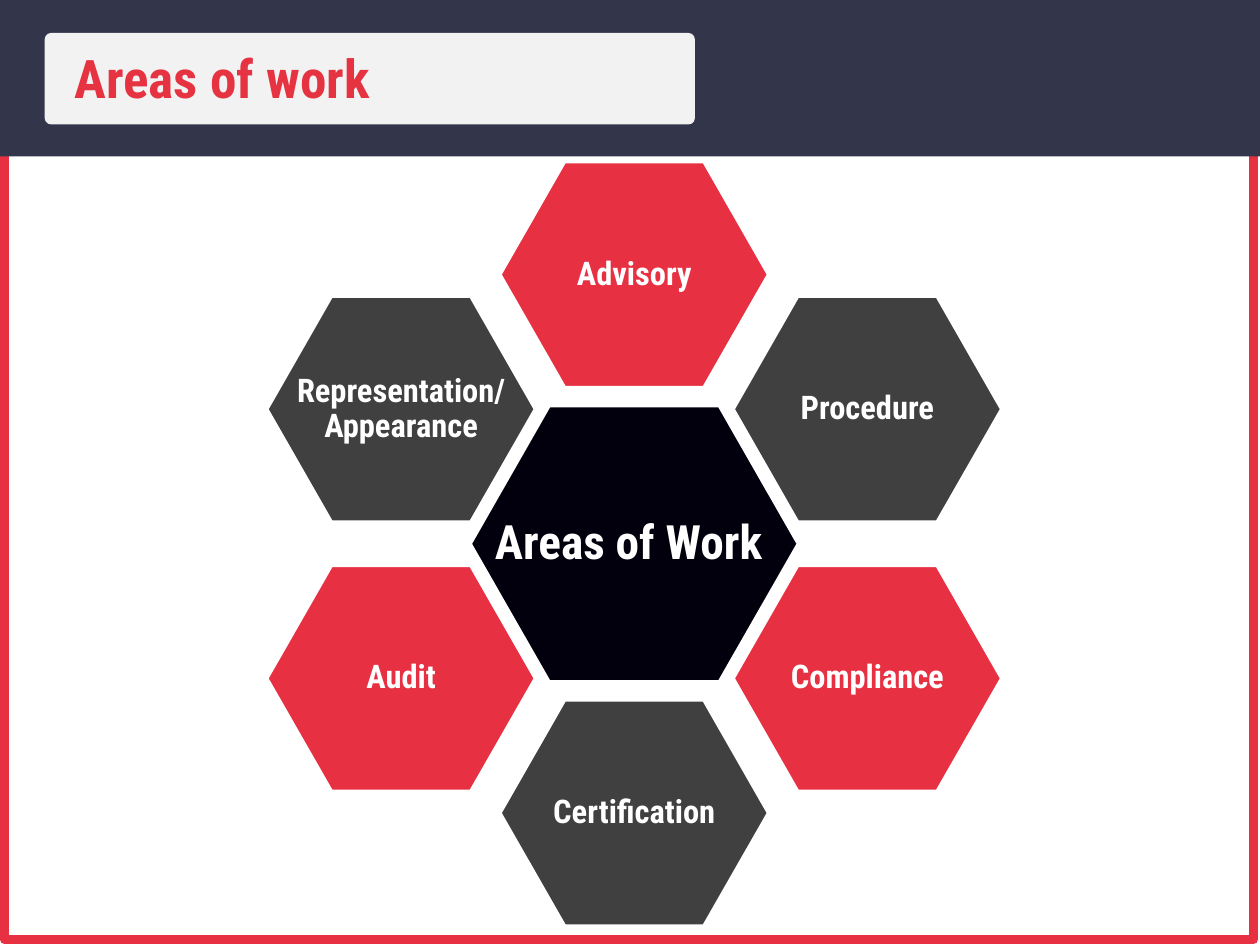
from math import cos, radians, sin

from pptx import Presentation
from pptx.dml.color import RGBColor
from pptx.enum.shapes import MSO_SHAPE
from pptx.enum.text import MSO_ANCHOR, MSO_AUTO_SIZE, PP_ALIGN
from pptx.util import Inches, Pt

RED = RGBColor(0xE7, 0x31, 0x43)
TITLE_RED = RGBColor(0xE5, 0x33, 0x41)
BLACK = RGBColor(0x02, 0x00, 0x0D)
GREY = RGBColor(0x40, 0x40, 0x40)
NAVY = RGBColor(0x33, 0x35, 0x4A)
PALE = RGBColor(0xF2, 0xF2, 0xF2)
WHITE = RGBColor(0xFF, 0xFF, 0xFF)

TITLE = "Areas of work"
HUB = "Areas of Work "
AREAS = ["Advisory", "Procedure", "Compliance", "Certification",
         "Audit", "Representation/\vAppearance"]

HUB_SIZE = (3.08, 2.59)
AREA_SIZE = (2.52, 2.12)
CENTER_X, CENTER_Y = 5.96, 5.11
RADIUS = 2.53


def add_panel(slide, kind, place, fill=None, line=None, width=0):
    panel = slide.shapes.add_shape(kind, *map(Inches, place))
    panel.shadow.inherit = False
    if fill is None:
        panel.fill.background()
    else:
        panel.fill.solid()
        panel.fill.fore_color.rgb = fill
    if line is None:
        panel.line.fill.background()
    else:
        panel.line.color.rgb = line
        panel.line.width = Pt(width)
    return panel


def write(frame, text, size, color, align, frame_format):
    for name, value in frame_format.items():
        setattr(frame, name, value)
    frame.text = text
    para = frame.paragraphs[0]
    para.alignment = align
    font_format = {"name": "Roboto Condensed", "size": Pt(size), "bold": True}
    for span in para.runs:
        for name, value in font_format.items():
            setattr(span.font, name, value)
        span.font.color.rgb = color
    return para


def add_hexagon(slide, text, center, size, fill, points):
    left, top = (middle - length / 2 for middle, length in zip(center, size))
    hexagon = add_panel(slide, MSO_SHAPE.HEXAGON, (left, top, *size), fill, WHITE, 2)
    hexagon.adjustments[0] = 0.286
    frame_format = {"word_wrap": False, "vertical_anchor": MSO_ANCHOR.MIDDLE}
    for side in ("left", "top", "right", "bottom"):
        frame_format[f"margin_{side}"] = Inches(0.03)
    para = write(hexagon.text_frame, text, points, WHITE, PP_ALIGN.CENTER, frame_format)
    para.line_spacing = 0.9


def main():
    deck = Presentation()
    deck.slide_width, deck.slide_height = Inches(11.84), Inches(8.88)
    slide = deck.slides.add_slide(deck.slide_layouts[5])

    add_panel(slide, MSO_SHAPE.RECTANGLE, (0.04, 1.24, 11.74, 7.59), line=RED, width=6)
    add_hexagon(slide, HUB, (CENTER_X, CENTER_Y), HUB_SIZE, BLACK, 32)
    for index, area in enumerate(AREAS):
        angle = radians(index * 360 / len(AREAS))
        center = (CENTER_X + RADIUS * sin(angle), CENTER_Y - RADIUS * cos(angle))
        add_hexagon(slide, area, center, AREA_SIZE, (RED, GREY)[index % 2], 22)

    add_panel(slide, MSO_SHAPE.RECTANGLE, (0, 0, 11.84, 1.47), NAVY)
    plate = add_panel(slide, MSO_SHAPE.ROUNDED_RECTANGLE, (0.42, 0.31, 6.11, 0.86), PALE)
    plate.adjustments[0] = 0.07

    title = slide.shapes.title
    place = {"left": 0.6, "top": 0.38, "width": 4.38, "height": 0.7}
    for name, value in place.items():
        setattr(title, name, Inches(value))
    write(title.text_frame, TITLE, 36, TITLE_RED, PP_ALIGN.LEFT,
          {"word_wrap": True, "vertical_anchor": MSO_ANCHOR.TOP,
           "auto_size": MSO_AUTO_SIZE.NONE})
    slide.shapes.element.append(title.element)

    deck.save("out.pptx")


if __name__ == "__main__":
    main()
